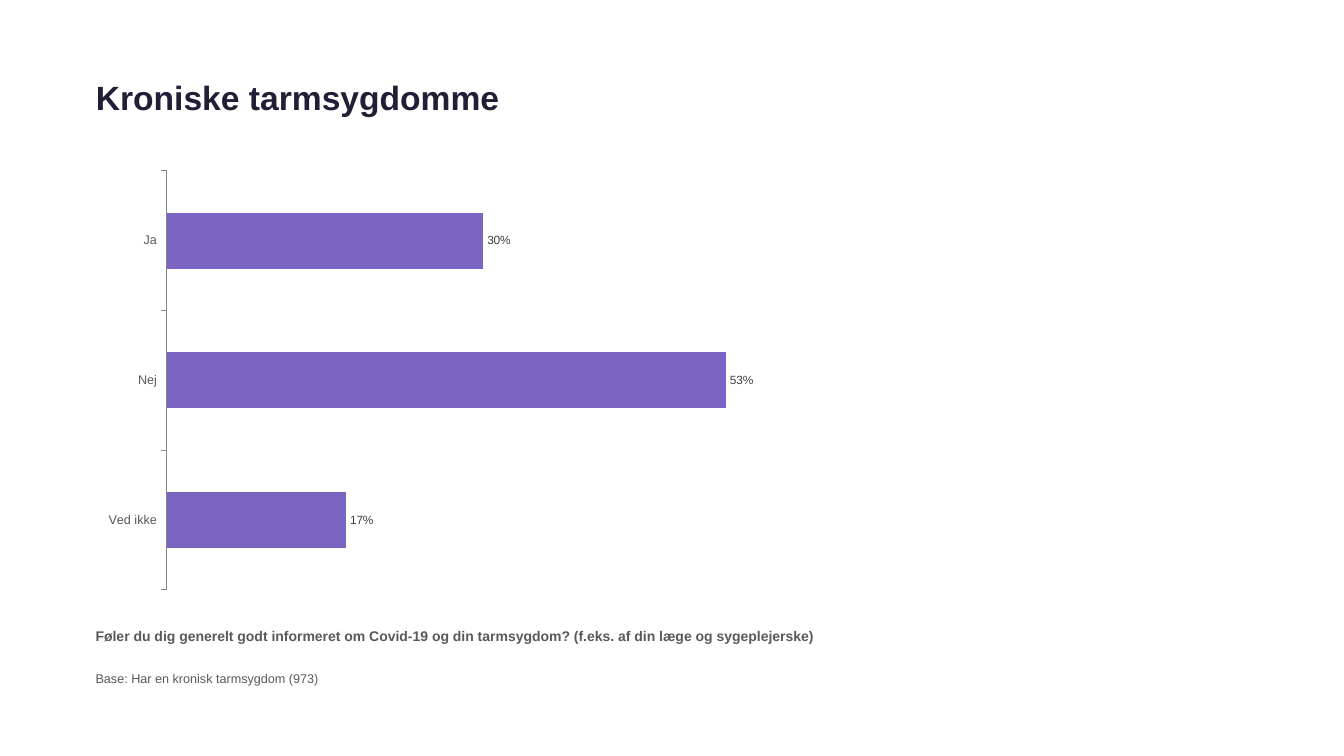
from dataclasses import dataclass

from lxml import etree
from pptx import Presentation
from pptx.chart.data import CategoryChartData
from pptx.dml.color import RGBColor
from pptx.enum.chart import XL_CHART_TYPE, XL_LABEL_POSITION, XL_TICK_LABEL_POSITION, XL_TICK_MARK
from pptx.enum.text import MSO_ANCHOR, PP_ALIGN
from pptx.oxml.ns import qn
from pptx.util import Inches, Pt

BARS = XL_CHART_TYPE.BAR_CLUSTERED
OUTER = XL_LABEL_POSITION.OUTSIDE_END
LOW = XL_TICK_LABEL_POSITION.LOW
OUT, NONE = XL_TICK_MARK.OUTSIDE, XL_TICK_MARK.NONE
TOP, MIDDLE = MSO_ANCHOR.TOP, MSO_ANCHOR.MIDDLE
LEFT = PP_ALIGN.LEFT

TITLE = "Kroniske tarmsygdomme"
ASK = "Føler du dig generelt godt informeret om Covid-19 og din tarmsygdom? (f.eks. af din læge og sygeplejerske)"
BASE = "Base: Har en kronisk tarmsygdom (973)"
SHARES = {"Ved ikke": 0.17, "Nej": 0.53, "Ja": 0.3}
PLOT = {"x": 0.07, "y": 0.02, "w": 0.91, "h": 0.96}
EDGE, WIDE = 0.85, 11.63


@dataclass(frozen=True)
class Theme:
    face: str = "Arial"
    ink: str = "241D36"
    grey: str = "595959"
    value: str = "404040"
    axis: str = "868686"
    bar: str = "7C64C3"
    head: float = 24
    ask: float = 10
    note: float = 9
    label: float = 8.5


THEME = Theme()


def style(font, size, color, bold=False):
    font.name = THEME.face
    font.size = Pt(size)
    font.bold = bold
    font.color.rgb = RGBColor.from_string(color)


def write(shape, text, top, high, size, color, bold=False, anchor=TOP):
    shape.left, shape.top = Inches(EDGE), Inches(top)
    shape.width, shape.height = Inches(WIDE), Inches(high)
    frame = shape.text_frame
    frame.word_wrap = True
    frame.vertical_anchor = anchor
    para = frame.paragraphs[0]
    para.alignment = LEFT
    run = para.add_run()
    run.text = text
    style(run.font, size, color, bold)


def place_plot(chart):
    area = chart.plots[0]._element.getparent()
    for old in area.findall(qn("c:layout")):
        area.remove(old)
    layout = etree.Element(qn("c:layout"))
    area.insert(0, layout)
    manual = etree.SubElement(layout, qn("c:manualLayout"))
    parts = {"layoutTarget": "inner", "xMode": "edge", "yMode": "edge", **PLOT}
    for name, value in parts.items():
        etree.SubElement(manual, qn("c:" + name)).set("val", str(value))


def add_bars(slide):
    data = CategoryChartData(number_format="0%")
    data.categories = list(SHARES)
    data.add_series("Series 1", list(SHARES.values()))
    box = [Inches(n) for n in (EDGE, 1.61, 11.5, 4.33)]
    chart = slide.shapes.add_chart(BARS, *box, data).chart
    chart.has_title = chart.has_legend = False
    style(chart.font, THEME.note, THEME.grey)

    cats = chart.category_axis
    cats.tick_label_position = LOW
    cats.major_tick_mark, cats.minor_tick_mark = OUT, NONE
    cats.has_major_gridlines = False
    cats.format.line.color.rgb = RGBColor.from_string(THEME.axis)
    cats.format.line.width = Pt(0.75)
    style(cats.tick_labels.font, THEME.note, THEME.grey)

    scale = chart.value_axis
    scale.minimum_scale, scale.maximum_scale = 0, 1
    scale.major_unit = 0.1
    scale.has_major_gridlines = False
    scale.visible = False

    plot = chart.plots[0]
    plot.gap_width, plot.overlap = 150, -10
    plot.vary_by_categories = False
    bars = plot.series[0]
    bars.format.fill.solid()
    bars.format.fill.fore_color.rgb = RGBColor.from_string(THEME.bar)
    labels = bars.data_labels
    labels.show_value = True
    labels.position = OUTER
    labels.number_format, labels.number_format_is_linked = "0%", False
    style(labels.font, THEME.label, THEME.value)
    place_plot(chart)


def main():
    deck = Presentation()
    deck.slide_width, deck.slide_height = Inches(13.33), Inches(7.5)
    slide = deck.slides.add_slide(deck.slide_layouts[5])
    write(slide.shapes.title, TITLE, 0.71, 0.5, THEME.head, THEME.ink, bold=True, anchor=MIDDLE)
    add_bars(slide)
    notes = [
        (ASK, 6.18, 0.43, THEME.ask, True),
        (BASE, 6.61, 0.28, THEME.note, False),
    ]
    for text, top, high, size, bold in notes:
        box = slide.shapes.add_textbox(0, 0, 0, 0)
        write(box, text, top, high, size, THEME.grey, bold=bold)
    deck.save("out.pptx")


if __name__ == "__main__":
    main()
